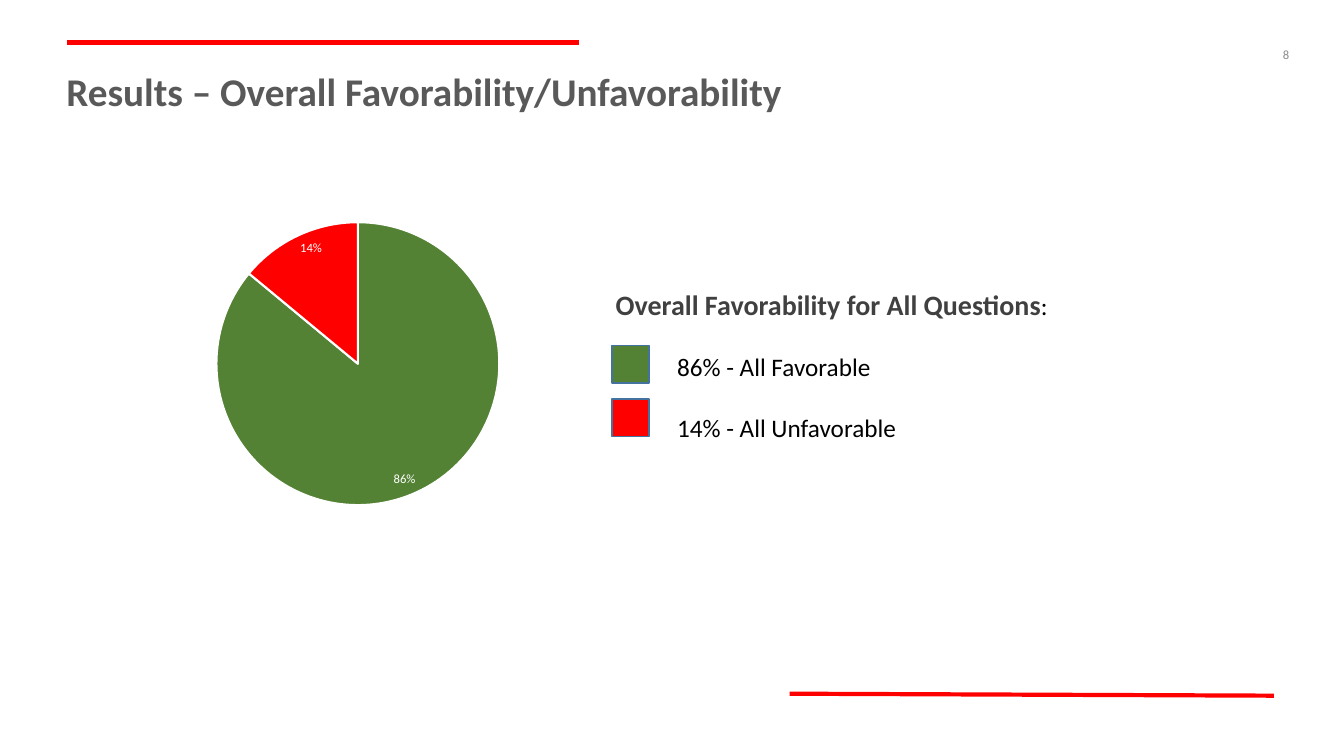
import pptx
import pptx.chart.data
import pptx.dml.color
import pptx.enum.chart
import pptx.enum.shapes
import pptx.enum.text
import pptx.oxml.ns
import pptx.oxml.xmlchemy
import pptx.util

Cm = pptx.util.Cm
Pt = pptx.util.Pt

COLORS = {
    "red": "FF0000",
    "green": "548235",
    "title": "595959",
    "heading": "404040",
    "text": "000000",
    "number": "8C8C8C",
    "outline": "43739E",
    "white": "FFFFFF",
}


def rgb(name):
    return pptx.dml.color.RGBColor.from_string(COLORS[name])


def xml_element(tag):
    return pptx.oxml.xmlchemy.OxmlElement(tag)


class SlideBuilder:
    """Holds the style and the current slide."""

    font_name = "Calibri"

    def __init__(self, slide):
        self.slide = slide

    def place(self, shape, left, top, width, height):
        shape.left, shape.top = Cm(left), Cm(top)
        shape.width, shape.height = Cm(width), Cm(height)

    def style_font(self, font, size, color, bold=False):
        font.name = self.font_name
        font.size = Pt(size)
        font.bold = bold
        font.color.rgb = rgb(color)

    def rule(self, start, end, width):
        line = self.slide.shapes.add_connector(
            pptx.enum.shapes.MSO_CONNECTOR.STRAIGHT, *map(Cm, start + end))
        line.line.color.rgb = rgb("red")
        line.line.width = Pt(width)
        line._element.spPr.append(xml_element("a:effectLst"))

    def title(self, text, box):
        title = self.slide.shapes.title
        self.place(title, *box)
        frame = title.text_frame
        frame.text = text
        frame.vertical_anchor = pptx.enum.text.MSO_ANCHOR.MIDDLE
        paragraph = frame.paragraphs[0]
        paragraph.alignment = pptx.enum.text.PP_ALIGN.LEFT
        paragraph.line_spacing = 0.9
        self.style_font(paragraph.runs[0].font, 28, "title", bold=True)

    def key_text(self, heading, items, box):
        body = self.slide.placeholders[1]
        self.place(body, *box)
        frame = body.text_frame
        frame.auto_size = pptx.enum.text.MSO_AUTO_SIZE.NONE
        frame.text = "\n".join([heading] + items)
        for index, paragraph in enumerate(frame.paragraphs):
            paragraph.space_before = Pt(22 if index else 0)
            properties = paragraph._p.get_or_add_pPr()
            properties.set("marL", str(Cm(1.85 if index else 0.3)))
            properties.set("indent", "0")
            properties.append(xml_element("a:buNone"))
            self.style_font(paragraph.runs[0].font, 18, "text")
        first = frame.paragraphs[0]
        self.style_font(first.runs[0].font, 20, "heading", bold=True)
        colon = first.add_run()
        colon.text = ":"
        self.style_font(colon.font, 18, "text")

    def swatch(self, color, left, top, side):
        square = self.slide.shapes.add_shape(
            pptx.enum.shapes.MSO_SHAPE.RECTANGLE,
            Cm(left), Cm(top), Cm(side), Cm(side))
        square.shadow.inherit = False
        square.fill.solid()
        square.fill.fore_color.rgb = rgb(color)
        square.line.color.rgb = rgb("outline")
        square.line.width = Pt(1)

    def page_number(self, text, box):
        frame = self.slide.shapes.add_textbox(*map(Cm, box)).text_frame
        frame.word_wrap = True
        frame.vertical_anchor = pptx.enum.text.MSO_ANCHOR.MIDDLE
        frame.text = text
        self.style_font(frame.paragraphs[0].runs[0].font, 9, "number")

    def pie(self, values, colors, box, plot_area):
        data = pptx.chart.data.CategoryChartData(number_format="0%")
        data.categories = [str(n) for n in range(1, len(values) + 1)]
        data.add_series("Series 1", values)
        chart = self.slide.shapes.add_chart(
            pptx.enum.chart.XL_CHART_TYPE.PIE, *map(Cm, box), data).chart
        chart.has_title = False
        chart.has_legend = False
        self.style_font(chart.font, 10, "white")
        plot = chart.plots[0]
        plot.vary_by_categories = True
        for index, color in enumerate(colors):
            slice_format = plot.series[0].points[index].format
            slice_format.fill.solid()
            slice_format.fill.fore_color.rgb = rgb(color)
            slice_format.line.color.rgb = rgb("white")
            slice_format.line.width = Pt(1.5)
        labels = plot.series[0].data_labels
        labels.show_value = True
        labels.number_format = "0%"
        labels.number_format_is_linked = False
        labels.position = pptx.enum.chart.XL_LABEL_POSITION.INSIDE_END
        self.style_font(labels.font, 9, "white")
        self.set_plot_area(chart, plot_area)

    def set_plot_area(self, chart, fractions):
        area = chart._chartSpace.chart.plotArea
        for old in area.findall(pptx.oxml.ns.qn("c:layout")):
            area.remove(old)
        layout = xml_element("c:layout")
        manual = xml_element("c:manualLayout")
        layout.append(manual)
        settings = [("layoutTarget", "inner"), ("xMode", "edge"), ("yMode", "edge")]
        for tag, value in settings + list(zip("xywh", fractions)):
            element = xml_element("c:" + tag)
            element.set("val", str(value))
            manual.append(element)
        area.insert(0, layout)


def main():
    presentation = pptx.Presentation()
    presentation.slide_width = Cm(33.87)
    presentation.slide_height = Cm(19.05)
    slide = presentation.slides.add_slide(presentation.slide_layouts[1])
    builder = SlideBuilder(slide)

    # Accent rules, title and page number
    builder.rule((1.7, 1.07), (14.6, 1.07), 4)
    builder.rule((19.9, 17.48), (32.1, 17.53), 3)
    builder.title("Results – Overall Favorability/Unfavorability",
                  (1.42, 1.55, 28.93, 1.65))
    builder.page_number("8", (32.08, 0.69, 1.27, 1.37))

    # Favorability key
    builder.key_text("Overall Favorability for All Questions",
                     ["86% - All Favorable", "14% - All Unfavorable"],
                     (14.96, 7.11, 12.19, 4.19))
    slice_colors = ["green", "red"]
    for row, color in enumerate(slice_colors):
        builder.swatch(color, 15.42, 8.71 + 1.35 * row, 0.94)

    # Pie chart
    builder.pie([0.86, 0.14], slice_colors, (3.48, 5.28, 10.97, 7.85),
                (0.18, 0.04, 0.65, 0.91))

    presentation.save("out.pptx")


if __name__ == "__main__":
    main()
